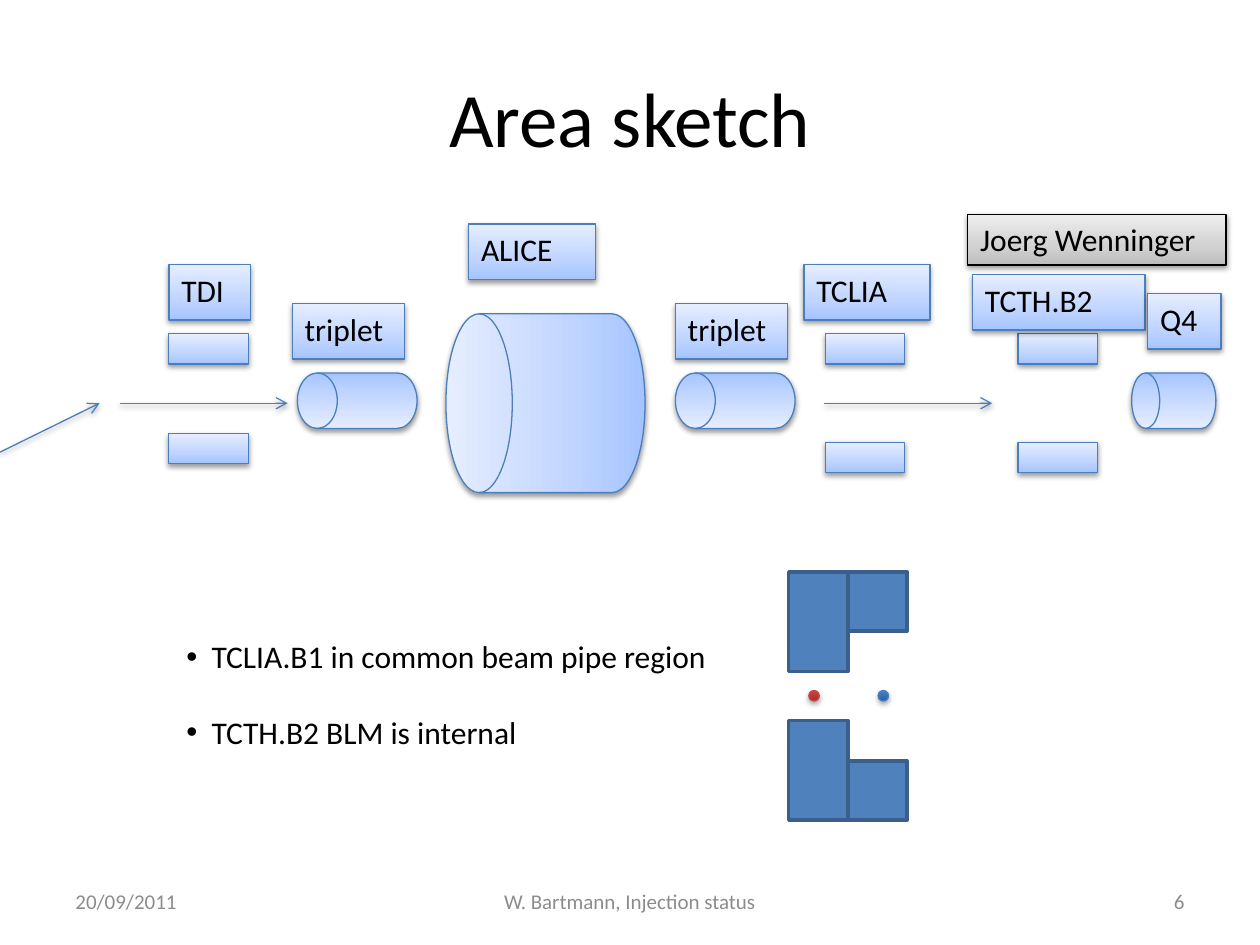
from collections import namedtuple
from dataclasses import dataclass

from lxml.etree import SubElement
from pptx import Presentation
from pptx.dml.color import RGBColor
from pptx.enum.shapes import MSO_CONNECTOR, MSO_SHAPE
from pptx.enum.text import MSO_ANCHOR, PP_ALIGN
from pptx.oxml.ns import qn
from pptx.util import Pt

Box = namedtuple("Box", "left top width height")


@dataclass(frozen=True)
class Theme:
    font: str = "Calibri"
    title_size: int = 44
    body_size: int = 18
    footer_size: int = 12
    ink: str = "000000"
    muted: str = "8C8C8C"
    edge: str = "4B7EBC"
    red_edge: str = "BF4C48"
    jaw: str = "4F81BD"
    jaw_edge: str = "3A5F8C"
    pale_blue: tuple = ((0, "A4C4FF"), (35, "BFD4FF"), (100, "E6EEFF"))
    grey: tuple = ((0, "BDBDBD"), (35, "D1D1D1"), (100, "EEEEEE"))
    red: tuple = ((0, "9C2F2D"), (80, "CB3E3A"), (100, "CE3B37"))
    blue: tuple = ((0, "2F5F99"), (80, "3D7CC7"), (100, "3A7CCB"))


THEME = Theme()


def points(box):
    return [Pt(round(value, 2)) for value in box]


def add_color(parent, color, alpha=None):
    node = SubElement(parent, qn("a:srgbClr"), val=color)
    if alpha:
        SubElement(node, qn("a:alpha"), val=str(alpha * 1000))


def set_line(line, color, width):
    line.color.rgb = RGBColor.from_string(color)
    line.width = Pt(width)


def add_shadow(properties, alpha=38):
    effects = properties.find(qn("a:effectLst"))
    if effects is None:
        effects = SubElement(properties, qn("a:effectLst"))
    shadow = SubElement(effects, qn("a:outerShdw"), blurRad=str(Pt(3.1)), dist=str(Pt(1.6)),
                        dir="5400000", rotWithShape="0")
    add_color(shadow, THEME.ink, alpha)


def add_plain(page, kind, box, edge, width):
    shape = page.shapes.add_shape(kind, *points(box))
    shape.shadow.inherit = False
    set_line(shape.line, edge, width)
    return shape


def add_glossy(page, kind, box, stops=THEME.pale_blue, edge=THEME.edge, rotation=0, alpha=38):
    shape = add_plain(page, kind, box, edge, 0.75)
    shape.rotation = rotation
    shape.fill.gradient()
    shape.fill.gradient_angle = 90
    stop_list = shape._element.spPr.find(qn("a:gradFill")).find(qn("a:gsLst"))
    stop_list.clear()
    for position, color in stops:
        add_color(SubElement(stop_list, qn("a:gs"), pos=str(position * 1000)), color)
    add_shadow(shape._element.spPr, alpha)
    return shape


def write_text(shape, lines, size, color=THEME.ink, align=PP_ALIGN.LEFT, anchor=MSO_ANCHOR.TOP):
    frame = shape.text_frame
    frame.word_wrap = True
    frame.vertical_anchor = anchor
    frame.text = "\n".join(lines)
    for para in frame.paragraphs:
        para.alignment = align
        para.font.name = THEME.font
        para.font.size = Pt(size)
        para.font.color.rgb = RGBColor.from_string(color)
    return frame


def add_text(page, box, lines, size, **style):
    return write_text(page.shapes.add_textbox(*points(box)), lines, size, **style)


def add_label(page, box, text, **style):
    write_text(add_glossy(page, MSO_SHAPE.RECTANGLE, box, **style), [text], THEME.body_size)


def add_arrow(page, start, end):
    arrow = page.shapes.add_connector(MSO_CONNECTOR.STRAIGHT, *points(start + end))
    set_line(arrow.line, THEME.edge, 0.75)
    SubElement(arrow.line._get_or_add_ln(), qn("a:tailEnd"), type="arrow")
    add_shadow(arrow._element.spPr)


def add_beam_line(page, box):
    axis = box.top + 102.4
    for left, lower in ((96.5, 119.7), (471.6, 124.7), (581.8, 124.7)):
        for top in (62.8, lower):
            add_glossy(page, MSO_SHAPE.RECTANGLE,
                       Box(box.left + left, box.top + top, 45.4, 17.3))

    add_arrow(page, (box.left, axis + 28), (box.left + 56.9, axis))
    for left in (68.4, 471):
        add_arrow(page, (box.left + left, axis), (box.left + left + 96, axis))

    add_glossy(page, MSO_SHAPE.FLOWCHART_MAGNETIC_DISK,
               Box(box.left + 260.6, box.top + 45.5, 102.2, 113.8), rotation=270)
    for left, width in ((169.9, 68.4), (385.9, 68.4), (646.6, 48.2)):
        add_glossy(page, MSO_SHAPE.FLOWCHART_DIRECT_ACCESS_STORAGE,
                   Box(box.left + left, box.top + 85.1, width, 31.7), rotation=180)

    labels = (
        ("TDI", 96.5, 23.2, 46.8),
        ("triplet", 167, 45.5, 64.1),
        ("triplet", 385.9, 45.5, 64.1),
        ("ALICE", 267.8, 0, 72.7),
        ("TCLIA", 459.4, 23.2, 72),
        ("TCTH.B2", 555.8, 29, 98.6),
        ("Q4", 655.9, 39.8, 41.8),
    )
    for text, left, top, width in labels:
        add_label(page, Box(box.left + left, box.top + top, width, 31.7), text)


def add_notes_list(page, box):
    lines = ["TCLIA.B1 in common beam pipe region", "TCTH.B2 BLM is internal"]
    frame = add_text(page, box, lines, THEME.body_size)
    for para in frame.paragraphs:
        properties = para._p.get_or_add_pPr()
        properties.set("marL", str(Pt(14.4)))
        properties.set("indent", str(Pt(-14.4)))
        bullet_font = SubElement(properties, qn("a:buFont"), typeface="Arial")
        bullet = SubElement(properties, qn("a:buChar"), char="•")
        defaults = properties.find(qn("a:defRPr"))
        defaults.addprevious(bullet_font)
        defaults.addprevious(bullet)
    frame.paragraphs[1].space_before = Pt(21.6)


def add_collimator(page, box):
    width = box.width / 2
    for column, height in enumerate((56.9, width)):
        left = box.left + column * width
        for top in (box.top, box.top + box.height - height):
            jaw = add_plain(page, MSO_SHAPE.RECTANGLE, Box(left, top, width, height),
                            THEME.jaw_edge, 2)
            jaw.fill.solid()
            jaw.fill.fore_color.rgb = RGBColor.from_string(THEME.jaw)
    beams = ((11.5, THEME.red, THEME.red_edge), (51.1, THEME.blue, THEME.edge))
    for offset, stops, edge in beams:
        add_glossy(page, MSO_SHAPE.OVAL, Box(box.left + offset, box.top + 67.7, 6, 6),
                   stops=stops, edge=edge, alpha=35)


def add_footer(page, box):
    parts = (
        ("20/09/2011", 0, 168, PP_ALIGN.LEFT),
        ("W. Bartmann, Injection status", 210, 228, PP_ALIGN.CENTER),
        ("6", 480, 168, PP_ALIGN.RIGHT),
    )
    for text, left, width, align in parts:
        add_text(page, Box(box.left + left, box.top, width, box.height), [text],
                 THEME.footer_size, color=THEME.muted, align=align, anchor=MSO_ANCHOR.MIDDLE)


def main():
    deck = Presentation()
    deck.slide_width, deck.slide_height = Pt(720), Pt(540)
    page = deck.slides.add_slide(deck.slide_layouts[6])
    add_text(page, Box(36, 21.6, 648, 90), ["Area sketch"], THEME.title_size,
             align=PP_ALIGN.CENTER, anchor=MSO_ANCHOR.MIDDLE)
    add_footer(page, Box(36, 500.5, 648, 28.8))
    add_beam_line(page, Box(0, 128, 720, 160))
    add_label(page, Box(553, 122.4, 147.6, 29), "Joerg Wenninger",
              stops=THEME.grey, edge=THEME.ink)
    add_notes_list(page, Box(99.4, 360.7, 453.6, 94.3))
    add_collimator(page, Box(450.7, 326.9, 67.7, 141.8))
    deck.save("out.pptx")


if __name__ == "__main__":
    main()
